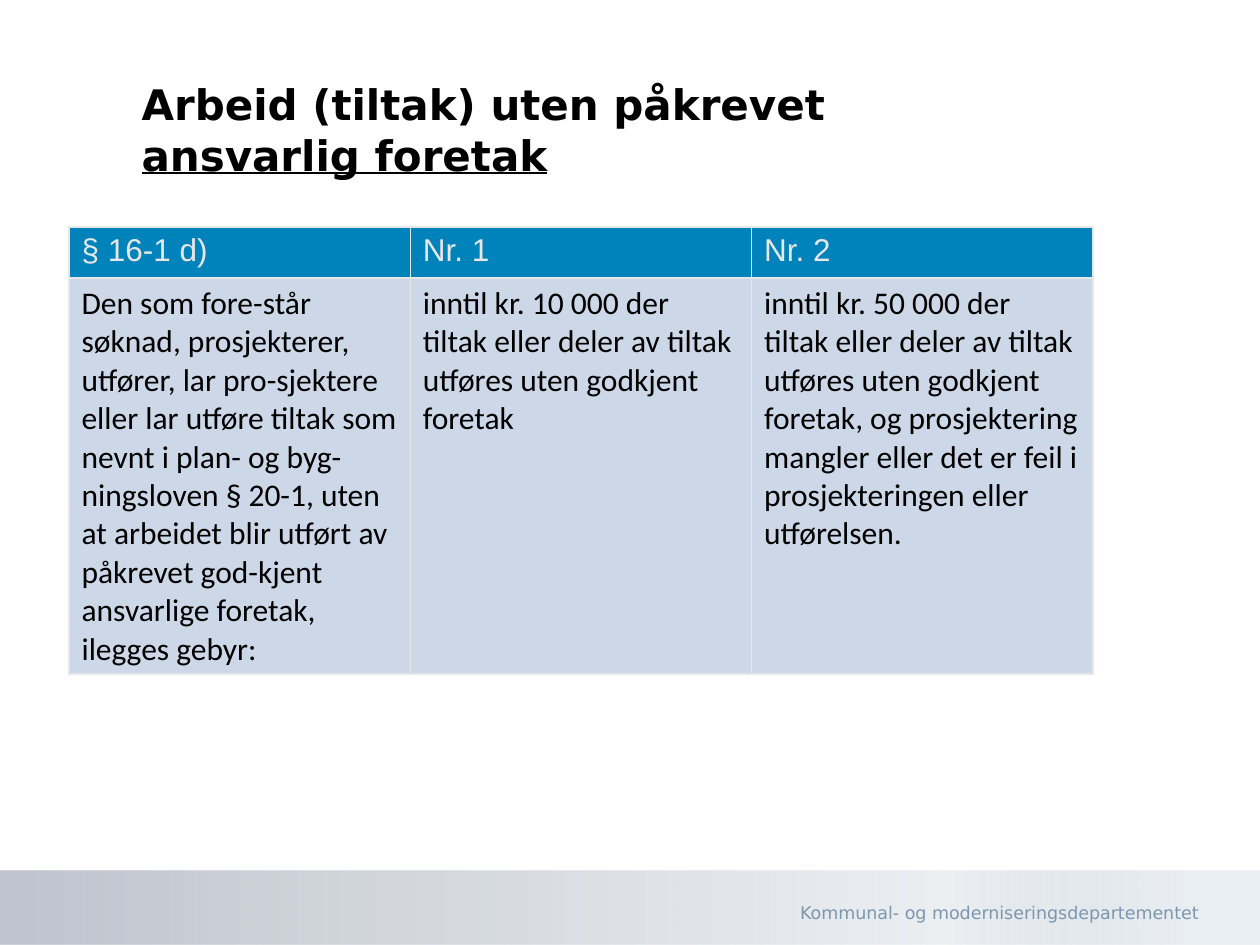
"""Build the slide on work done without the required responsible firm."""
from lxml.etree import SubElement
from pptx import Presentation
from pptx.dml.color import RGBColor
from pptx.enum.shapes import MSO_SHAPE
from pptx.enum.text import MSO_ANCHOR, MSO_AUTO_SIZE, PP_ALIGN
from pptx.oxml.ns import qn
from pptx.util import Inches, Pt

TITLE = [("Arbeid (tiltak) uten påkrevet ", False), ("ansvarlig foretak", True)]
ROWS = [
    ("§ 16-1 d)", "Nr. 1", "Nr. 2"),
    (
        "Den som fore-står søknad, prosjekterer, utfører, lar pro-sjektere eller "
        "lar utføre tiltak som nevnt i plan- og byg-ningsloven § 20-1, uten at "
        "arbeidet blir utført av påkrevet god-kjent ansvarlige foretak, ilegges gebyr:",
        "inntil kr. 10 000 der tiltak eller deler av tiltak utføres uten godkjent foretak",
        "inntil kr. 50 000 der tiltak eller deler av tiltak utføres uten godkjent foretak, "
        "og prosjektering mangler eller det er feil i prosjekteringen eller utførelsen.",
    ),
]
FOOTER = "Kommunal- og moderniseringsdepartementet"

THEME = {
    "title": {"name": "DejaVu Sans", "size": 24, "color": "000000", "bold": True},
    "footer": {"name": "DejaVu Sans", "size": 10, "color": "7C96AD"},
    "rows": [
        {"name": "Arial", "size": 18, "color": "E6E7E8"},
        {"name": "Calibri", "size": 18, "color": "000000"},
    ],
    "row_fills": ["0082BA", "CCD8E7"],
    "border": ("E6E7E8", 1),
    "band": [(0, "7F899E", 50), (75, "D9DFE5", 48), (94, "7C96AD", 16)],
}
BOXES = {
    "title": (129, 88, 868, 98),
    "table": (69, 227, 1024, 447),
    "band": (0, 871, 1260, 74),
    "footer": (774, 896, 437, 34),
}
ROW_HEIGHTS = [51, 396]


def px(n):
    return Inches(n / 126)


def box(name):
    return [px(n) for n in BOXES[name]]


def add_run(p, text, style, **extra):
    r = p.add_run()
    r.text = text
    for key, value in {**style, **extra}.items():
        if key == "color":
            r.font.color.rgb = RGBColor.from_string(value)
        else:
            setattr(r.font, key, Pt(value) if key == "size" else value)


def add_color(parent, color, opacity=100):
    clr = SubElement(parent, qn("a:srgbClr"), val=color)
    if opacity < 100:
        SubElement(clr, qn("a:alpha"), val=str(opacity * 1000))


def add_band(s):
    sp = s.shapes.add_shape(MSO_SHAPE.RECTANGLE, *box("band"))
    sp.shadow.inherit = False
    sp.line.fill.background()
    sp.fill.gradient()
    sp.fill.gradient_angle = 0
    stops = sp.fill._fill._gradFill.find(qn("a:gsLst"))
    for old in list(stops):
        stops.remove(old)
    for pos, color, opacity in THEME["band"]:
        add_color(SubElement(stops, qn("a:gs"), pos=str(pos * 1000)), color, opacity)


def add_footer(s):
    tf = s.shapes.add_textbox(*box("footer")).text_frame
    tf.word_wrap = True
    tf.vertical_anchor = MSO_ANCHOR.MIDDLE
    p = tf.paragraphs[0]
    p.alignment = PP_ALIGN.RIGHT
    add_run(p, FOOTER, THEME["footer"])


def fill_title(s):
    sp = s.shapes.title
    sp.left, sp.top, sp.width, sp.height = box("title")
    tf = sp.text_frame
    tf.word_wrap = True
    tf.auto_size = MSO_AUTO_SIZE.NONE
    tf.vertical_anchor = MSO_ANCHOR.BOTTOM
    p = tf.paragraphs[0]
    p.alignment = PP_ALIGN.LEFT
    for text, underline in TITLE:
        add_run(p, text, THEME["title"], underline=underline)


def set_borders(cell):
    color, width = THEME["border"]
    tc_pr = cell._tc.get_or_add_tcPr()
    for i, side in enumerate(("lnL", "lnR", "lnT", "lnB")):
        ln = tc_pr.makeelement(qn(f"a:{side}"), {"w": str(Pt(width))})
        add_color(SubElement(ln, qn("a:solidFill")), color)
        tc_pr.insert(i, ln)


def add_rules(s):
    table = s.shapes.add_table(len(ROWS), len(ROWS[0]), *box("table")).table
    for i, texts in enumerate(ROWS):
        table.rows[i].height = px(ROW_HEIGHTS[i])
        for j, text in enumerate(texts):
            cell = table.cell(i, j)
            cell.fill.solid()
            cell.fill.fore_color.rgb = RGBColor.from_string(THEME["row_fills"][i])
            set_borders(cell)
            add_run(cell.text_frame.paragraphs[0], text, THEME["rows"][i], bold=False)


def main():
    prs = Presentation()
    prs.slide_width, prs.slide_height = px(1260), px(945)
    s = prs.slides.add_slide(prs.slide_layouts[5])
    add_band(s)
    add_footer(s)
    fill_title(s)
    add_rules(s)
    prs.save("out.pptx")


if __name__ == "__main__":
    main()
